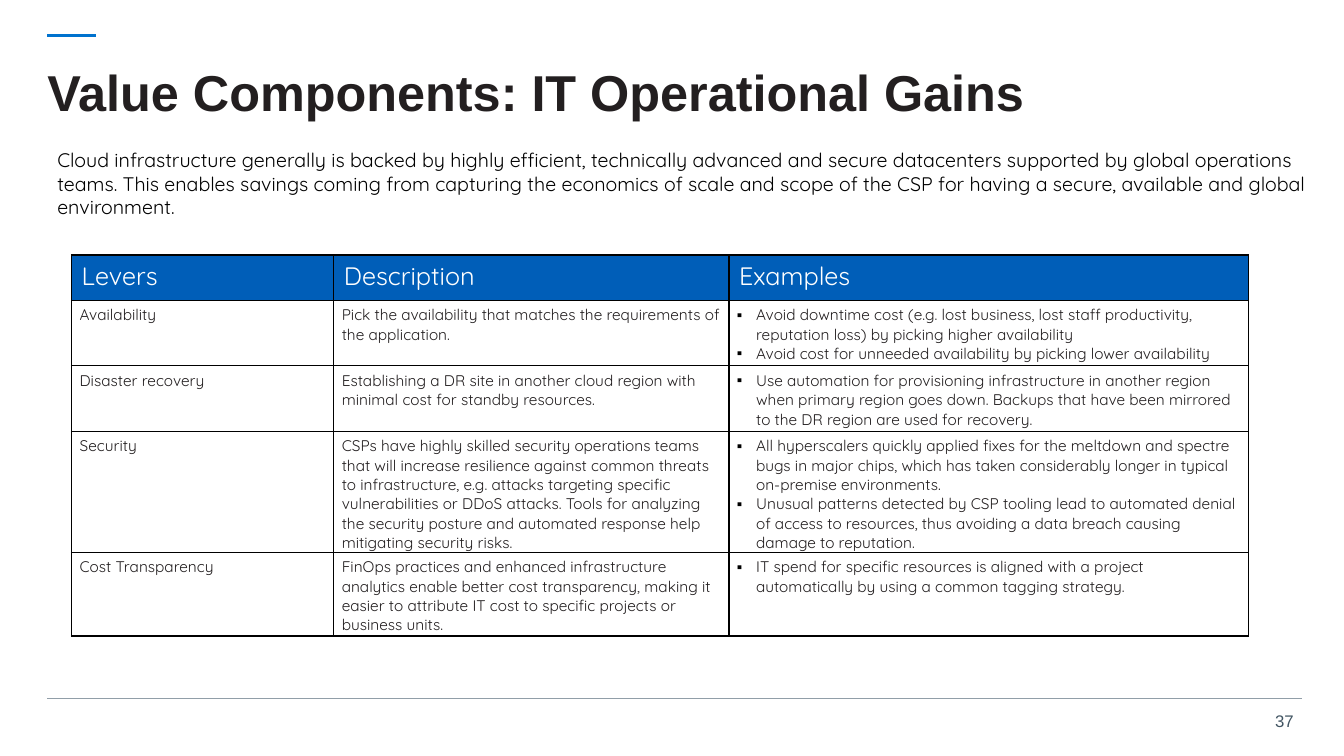
from lxml import etree
from pptx import Presentation
from pptx.dml.color import RGBColor
from pptx.enum.shapes import MSO_CONNECTOR
from pptx.enum.text import MSO_ANCHOR, PP_ALIGN
from pptx.oxml.ns import qn
from pptx.util import Inches, Pt

STRAIGHT = MSO_CONNECTOR.STRAIGHT
TOP, MIDDLE = MSO_ANCHOR.TOP, MSO_ANCHOR.MIDDLE
LEFT, RIGHT = PP_ALIGN.LEFT, PP_ALIGN.RIGHT

COLORS = {
    "accent": "0072CE",
    "rule": "919EA8",
    "header": "005EB8",
    "white": "FFFFFF",
    "ink": "231F20",
    "black": "000000",
    "page": "425563",
}
HEADING_FONT, BODY_FONT = "Arial", "Quicksand"

TITLE = "Value Components: IT Operational Gains"
INTRO = (
    "Cloud infrastructure generally is backed by highly efficient, technically advanced and "
    "secure datacenters supported by global operations teams. This enables savings coming from "
    "capturing the economics of scale and scope of the CSP for having a secure, available and "
    "global environment."
)
PAGE_NUMBER = "37"
HEADERS = ["Levers", "Description", "Examples"]
LEVERS = [
    (
        "Availability",
        "Pick the availability that matches the requirements of the application.",
        [
            "Avoid downtime cost (e.g. lost business, lost staff productivity, reputation loss) "
            "by picking higher availability",
            "Avoid cost for unneeded availability by picking lower availability",
        ],
    ),
    (
        "Disaster recovery",
        "Establishing a DR site in another cloud region with minimal cost for standby resources.",
        [
            "Use automation for provisioning infrastructure in another region when primary region "
            "goes down. Backups that have been mirrored to the DR region are used for recovery.",
        ],
    ),
    (
        "Security",
        "CSPs have highly skilled security operations teams that will increase resilience against "
        "common threats to infrastructure, e.g. attacks targeting specific vulnerabilities or DDoS "
        "attacks. Tools for analyzing the security posture and automated response help mitigating "
        "security risks.",
        [
            "All hyperscalers quickly applied fixes for the meltdown and spectre bugs in major "
            "chips, which has taken considerably longer in typical on-premise environments.",
            "Unusual patterns detected by CSP tooling lead to automated denial of access to "
            "resources, thus avoiding a data breach causing damage to reputation.",
        ],
    ),
    (
        "Cost Transparency",
        "FinOps practices and enhanced infrastructure analytics enable better cost transparency, "
        "making it easier to attribute IT cost to specific projects or business units.",
        [
            "IT spend for specific resources is aligned with a project automatically by using a "
            "common tagging strategy.",
        ],
    ),
]
COLUMN_WIDTHS = [2.6, 3.92, 5.15]
ROW_HEIGHTS = [0.45, 0.65, 0.65, 1.2, 0.83]
TABLE_LEFT, TABLE_TOP = 0.71, 2.53
BULLET_INDENT = 0.19


def rgb(name):
    return RGBColor.from_string(COLORS[name])


def style(paragraph, size, color, font=BODY_FONT, bold=False):
    paragraph.font.name = font
    paragraph.font.size = Pt(size)
    paragraph.font.bold = bold
    paragraph.font.color.rgb = rgb(color)


def add_rule(slide, x1, x2, y, color, width):
    rule = slide.shapes.add_connector(STRAIGHT, Inches(x1), Inches(y), Inches(x2), Inches(y))
    rule.line.color.rgb = rgb(color)
    rule.line.width = Pt(width)
    etree.SubElement(rule.line._get_or_add_ln().getparent(), qn("a:effectLst"))


def add_text(slide, box, text, size, color, font=BODY_FONT, bold=False,
             align=LEFT, anchor=TOP, insets=(0.1, 0.05)):
    frame = slide.shapes.add_textbox(*map(Inches, box)).text_frame
    frame.word_wrap = True
    frame.vertical_anchor = anchor
    frame.margin_left = frame.margin_right = Inches(insets[0])
    frame.margin_top = frame.margin_bottom = Inches(insets[1])
    paragraph = frame.paragraphs[0]
    paragraph.text = text
    paragraph.alignment = align
    style(paragraph, size, color, font, bold)
    return paragraph


def add_bullet(paragraph):
    props = paragraph._p.get_or_add_pPr()
    props.set("marL", str(Inches(BULLET_INDENT)))
    props.set("indent", str(-Inches(BULLET_INDENT)))
    bullet_color = etree.Element(qn("a:buClr"))
    etree.SubElement(bullet_color, qn("a:srgbClr"), val=COLORS["black"])
    bullet_font = etree.Element(qn("a:buFont"), typeface=HEADING_FONT)
    bullet = etree.Element(qn("a:buChar"), char="▪")
    for position, element in enumerate((bullet_color, bullet_font, bullet)):
        props.insert(position, element)


def add_borders(cell):
    props = cell._tc.get_or_add_tcPr()
    for position, side in enumerate(("lnL", "lnR", "lnT", "lnB")):
        border = etree.Element(qn(f"a:{side}"), w=str(Pt(1)))
        fill = etree.SubElement(border, qn("a:solidFill"))
        etree.SubElement(fill, qn("a:srgbClr"), val=COLORS["black"])
        props.insert(position, border)


def fill_cell(cell, content, is_header):
    """Write a string as plain text, or a list of strings as bullets."""
    cell.fill.solid()
    cell.fill.fore_color.rgb = rgb("header" if is_header else "white")
    cell.margin_left = cell.margin_right = Inches(0.1 if is_header else 0.08)
    cell.margin_top = Inches(0.05)
    cell.margin_bottom = Inches(0.05 if is_header else 0)
    bulleted = isinstance(content, list)
    lines = content if bulleted else [content]
    cell.text_frame.text = "\n".join(lines)
    for paragraph in cell.text_frame.paragraphs:
        style(paragraph, 18 if is_header else 11, "white" if is_header else "ink")
        if bulleted:
            add_bullet(paragraph)
    add_borders(cell)


def add_levers_table(slide):
    rows = [HEADERS, *LEVERS]
    table = slide.shapes.add_table(
        len(rows), len(HEADERS), Inches(TABLE_LEFT), Inches(TABLE_TOP),
        Inches(sum(COLUMN_WIDTHS)), Inches(sum(ROW_HEIGHTS)),
    ).table
    table.horz_banding = False
    for column, width in zip(table.columns, COLUMN_WIDTHS):
        column.width = Inches(width)
    for row, height in zip(table.rows, ROW_HEIGHTS):
        row.height = Inches(height)
    for r, contents in enumerate(rows):
        for c, content in enumerate(contents):
            fill_cell(table.cell(r, c), content, is_header=r == 0)


def main():
    deck = Presentation()
    deck.slide_width, deck.slide_height = Inches(13.33), Inches(7.5)
    slide = deck.slides.add_slide(deck.slide_layouts[6])

    add_rule(slide, 0.47, 0.95, 0.35, "accent", 2)
    add_rule(slide, 0.47, 12.91, 6.93, "rule", 0.75)
    add_text(slide, (12.42, 7, 0.51, 0.3), PAGE_NUMBER, 12, "page", HEADING_FONT, align=RIGHT)
    title = add_text(slide, (0.47, 0.47, 12.47, 0.95), TITLE, 36, "ink", HEADING_FONT,
                     bold=True, anchor=MIDDLE, insets=(0, 0))
    title.line_spacing = 0.9
    add_text(slide, (0.47, 1.42, 12.71, 0.57), INTRO, 14, "black")
    add_levers_table(slide)
    deck.save("out.pptx")


if __name__ == "__main__":
    main()
